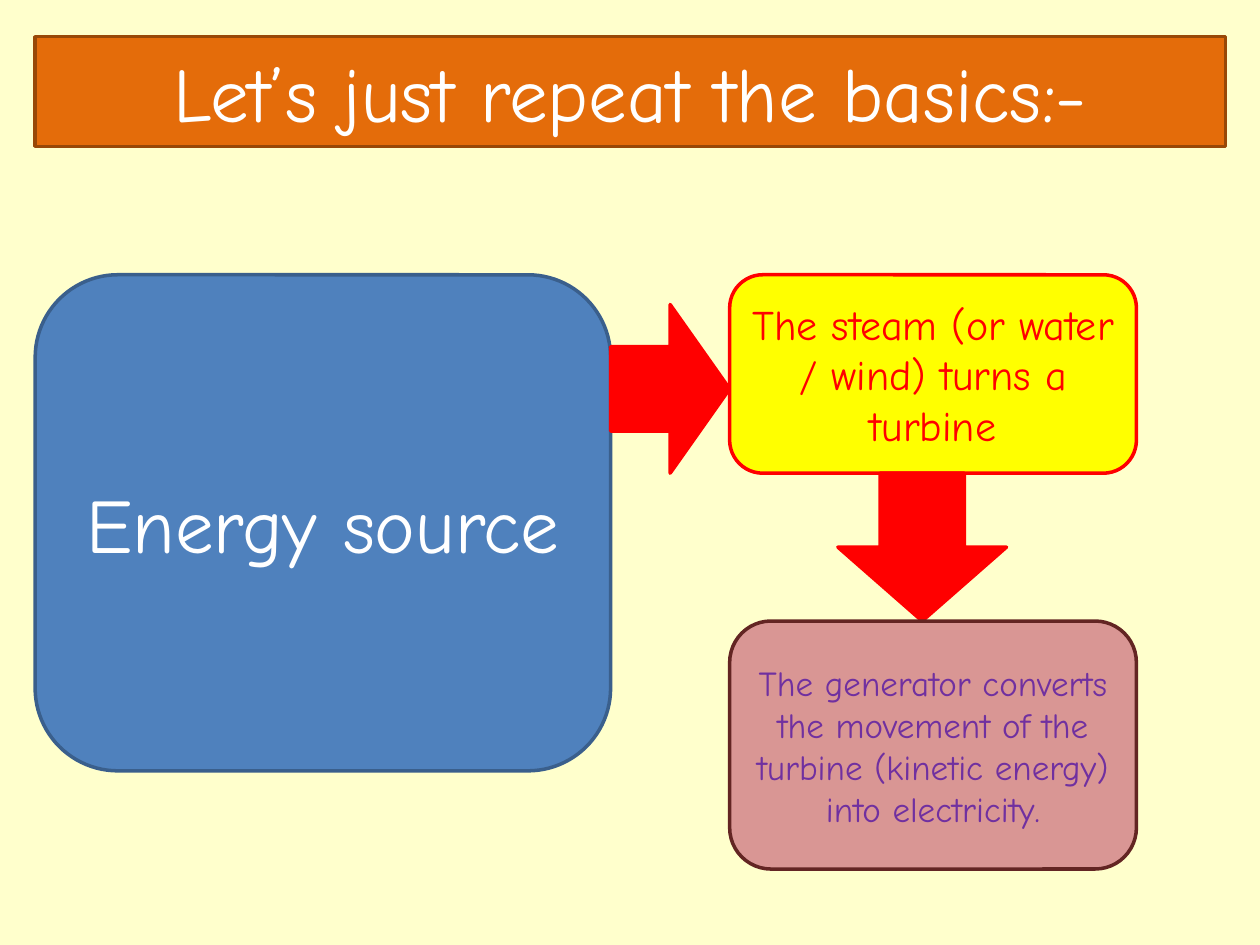
from pptx import Presentation
from pptx.dml.color import RGBColor
from pptx.enum.shapes import MSO_SHAPE as Shape
from pptx.enum.text import MSO_ANCHOR as Anchor, PP_ALIGN as Align
from pptx.oxml import parse_xml
from pptx.oxml.ns import nsdecls
from pptx.util import Cm, Pt

COLORS = {
    "backdrop": "FFFF99", "panel": "FFFFCC", "white": "FFFFFF",
    "orange": "E46C0A", "brown": "984807", "blue": "4F81BD", "navy": "3A5F8C",
    "yellow": "FFFF00", "red": "FF0000", "pink": "D99694", "maroon": "632523",
    "purple": "7030A0",
}
FONT = "Comic Neue"
LEFT, TOP, STEP_LEFT, STEP_WIDTH = 0.71, 5.54, 14.71, 8.2
SOURCE_WIDTH, TURBINE_HEIGHT, GENERATOR_TOP = 11.6, 4, 12.52
ARROW_BREADTH, ARROW_CENTER = 3.4, 18.59

TITLE = ("Let’s just repeat the basics:-", (LEFT, 0.74, 24, 2.21),
         "orange", "brown", "white", 44)
SOURCE = ("Energy source", (LEFT, TOP, SOURCE_WIDTH, 10),
          "blue", "navy", "white", 44)
TURBINE = ("The steam (or water / wind) turns a turbine",
           (STEP_LEFT, TOP, STEP_WIDTH, TURBINE_HEIGHT),
           "yellow", "red", "red", 24)
GENERATOR = ("The generator converts the movement of the turbine "
             "(kinetic energy) into electricity.",
             (STEP_LEFT, GENERATOR_TOP, STEP_WIDTH, 5),
             "pink", "maroon", "purple", 20)


def color(name):
    return RGBColor.from_string(COLORS[name])


def paint(shape, fill, line=None):
    shape.fill.solid()
    shape.fill.fore_color.rgb = color(fill)
    if line:
        shape.line.color.rgb = color(line)
        shape.line.width = Pt(2)
    else:
        shape.line.fill.background()


def write(shape, text, text_color, size):
    frame = shape.text_frame
    frame.text = text
    frame.word_wrap = True
    frame.vertical_anchor = Anchor.MIDDLE
    paragraph = frame.paragraphs[0]
    paragraph.alignment = Align.CENTER
    font = paragraph.runs[0].font
    for name, value in {"name": FONT, "size": Pt(size)}.items():
        setattr(font, name, value)
    font.color.rgb = color(text_color)


def add_shape(slide, kind, box, fill, line=None):
    shape = slide.shapes.add_shape(kind, *map(Cm, box))
    shape.shadow.inherit = False
    paint(shape, fill, line)
    return shape


def add_title(slide, text, box, fill, line, text_color, size):
    title = slide.shapes.title
    for name, value in zip(("left", "top", "width", "height"), box):
        setattr(title, name, Cm(value))
    title.element.spPr.append(parse_xml(
        f'<a:prstGeom {nsdecls("a")} prst="roundRect"><a:avLst/></a:prstGeom>'))
    paint(title, fill, line)
    write(title, text, text_color, size)


def add_box(slide, text, box, fill, line, text_color, size):
    shape = add_shape(slide, Shape.ROUNDED_RECTANGLE, box, fill, line)
    write(shape, text, text_color, size)


def add_arrow(slide, center_x, center_y, length, rotation=0):
    box = (center_x - length / 2, center_y - ARROW_BREADTH / 2,
           length, ARROW_BREADTH)
    arrow = add_shape(slide, Shape.RIGHT_ARROW, box, "red", "red")
    arrow.rotation = rotation


def main():
    """Build the slide on how an energy source becomes electricity."""
    presentation = Presentation()
    presentation.slide_width, presentation.slide_height = Cm(25.4), Cm(19.05)
    slide = presentation.slides.add_slide(presentation.slide_layouts[5])
    slide.background.fill.solid()
    slide.background.fill.fore_color.rgb = color("backdrop")

    panel = add_shape(slide, Shape.RECTANGLE, (0, 0, 25.4, 19.05), "panel")
    slide.shapes.title.element.addprevious(panel.element)
    add_title(slide, *TITLE)

    source_right = LEFT + SOURCE_WIDTH
    turbine_bottom = TOP + TURBINE_HEIGHT
    add_box(slide, *SOURCE)
    add_arrow(slide, (source_right + STEP_LEFT) / 2,
              turbine_bottom - ARROW_BREADTH / 2, STEP_LEFT - source_right)
    add_box(slide, *TURBINE)
    add_arrow(slide, ARROW_CENTER, (turbine_bottom + GENERATOR_TOP) / 2,
              GENERATOR_TOP - turbine_bottom, rotation=90)
    add_box(slide, *GENERATOR)
    presentation.save("out.pptx")


if __name__ == "__main__":
    main()
